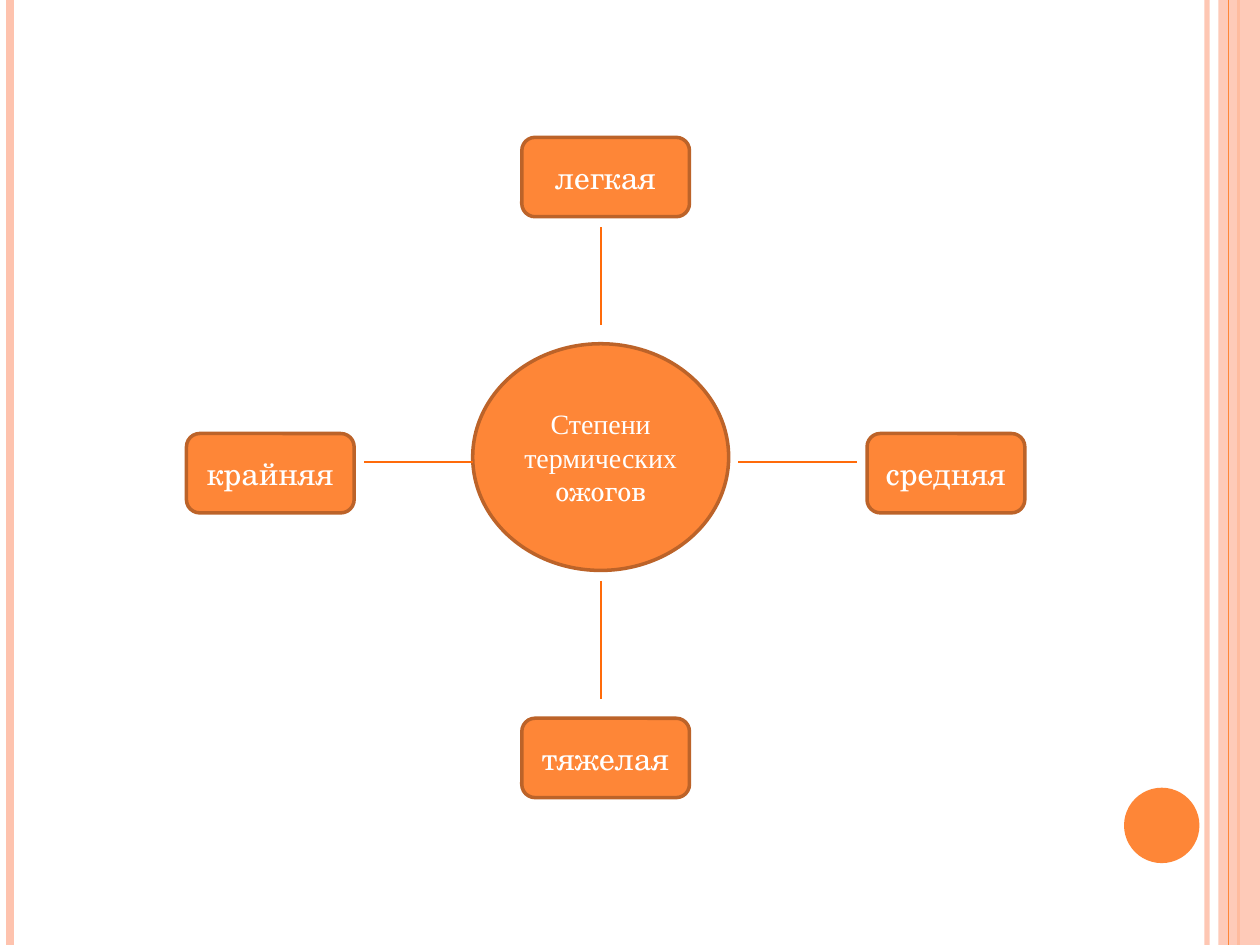
from dataclasses import dataclass
from lxml import etree
from pptx import Presentation, util as u
from pptx.dml.color import RGBColor
from pptx.enum import shapes, text
from pptx.oxml.ns import qn


@dataclass(frozen=True)
class Theme:
    main: str = "FE8637"
    edge: str = "BC6329"
    link: str = "FF6B0A"
    pale: str = "FEC3AE"
    white: str = "FFFFFF"
    serif: str = "TeX Gyre Schola"
    roman: str = "Times New Roman"
    hub: int = 16
    node: int = 18


theme = Theme()
kind = shapes.MSO_SHAPE
deck = Presentation()
deck.slide_width, deck.slide_height = u.Cm(25.4), u.Cm(19.05)
slide = deck.slides.add_slide(deck.slide_layouts[6])


def line(x1, y1, x2, y2, color, width, alpha=100):
    item = slide.shapes.add_connector(
        shapes.MSO_CONNECTOR.STRAIGHT, u.Cm(x1), u.Cm(y1), u.Cm(x2), u.Cm(y2))
    item.line.color.rgb = RGBColor.from_string(color)
    item.line.width = u.Pt(width)
    props = item.line._ln.getparent()
    if alpha < 100:
        tint = props.find(".//" + qn("a:srgbClr"))
        etree.SubElement(tint, qn("a:alpha"), val=str(alpha * 1000))
    etree.SubElement(props, qn("a:effectLst"))


def block(form, box, color, runs=(), size=0):
    item = slide.shapes.add_shape(form, *[u.Cm(n) for n in box])
    item.shadow.inherit = False
    item.fill.solid()
    item.fill.fore_color.rgb = RGBColor.from_string(color)
    if not runs:
        item.line.fill.background()
        return item
    item.line.color.rgb = RGBColor.from_string(theme.edge)
    item.line.width = u.Pt(2)
    frame = item.text_frame
    frame.word_wrap = True
    frame.vertical_anchor = text.MSO_ANCHOR.MIDDLE
    para = frame.paragraphs[0]
    para.alignment = text.PP_ALIGN.CENTER
    for words, face in runs:
        run = para.add_run()
        run.text = words
        run.font.name = face
        run.font.size = u.Pt(size)
        run.font.color.rgb = RGBColor.from_string(theme.white)
    return item


# Side stripes, with the translucent band between them
for x, color, width, alpha in [(24.33, theme.pale, 3, 93),
                               (0.2, theme.pale, 4.5, 100),
                               (24.97, theme.main, 1.5, 100)]:
    line(x, 0, x, 19.05, color, width, alpha)
band = block(kind.RECTANGLE, (24.56, 0, 0.84, 19.05), theme.pale)
tint = band.fill._xPr.find(".//" + qn("a:srgbClr"))
etree.SubElement(tint, qn("a:alpha"), val="87000")
line(24.77, 0, 24.77, 19.05, theme.main, 0.75)

# Corner dot
block(kind.OVAL, (22.66, 15.88, 1.52, 1.52), theme.main)

# Hub
block(kind.OVAL, (9.53, 6.93, 5.16, 4.57), theme.main,
      [("Степени термических ", theme.roman), ("ожогов", theme.serif)], theme.hub)

# Links from the hub
midx, midy = 12.11, 9.32
for start, end in [(6.55, 4.57), (11.71, 14.1)]:
    line(midx, start, midx, end, theme.link, 1)
for start, end in [(14.88, 17.27), (9.53, 7.34)]:
    line(start, midy, end, midy, theme.link, 1)

# Degrees around the hub
for word, x, y, width in [("легкая", 10.52, 2.77, 3.38),
                          ("средняя", 17.48, 8.74, 3.18),
                          ("крайняя", 3.76, 8.74, 3.38),
                          ("тяжелая", 10.52, 14.48, 3.38)]:
    block(kind.ROUNDED_RECTANGLE, (x, y, width, 1.6), theme.main,
          [(word, theme.serif)], theme.node)

deck.save("out.pptx")
